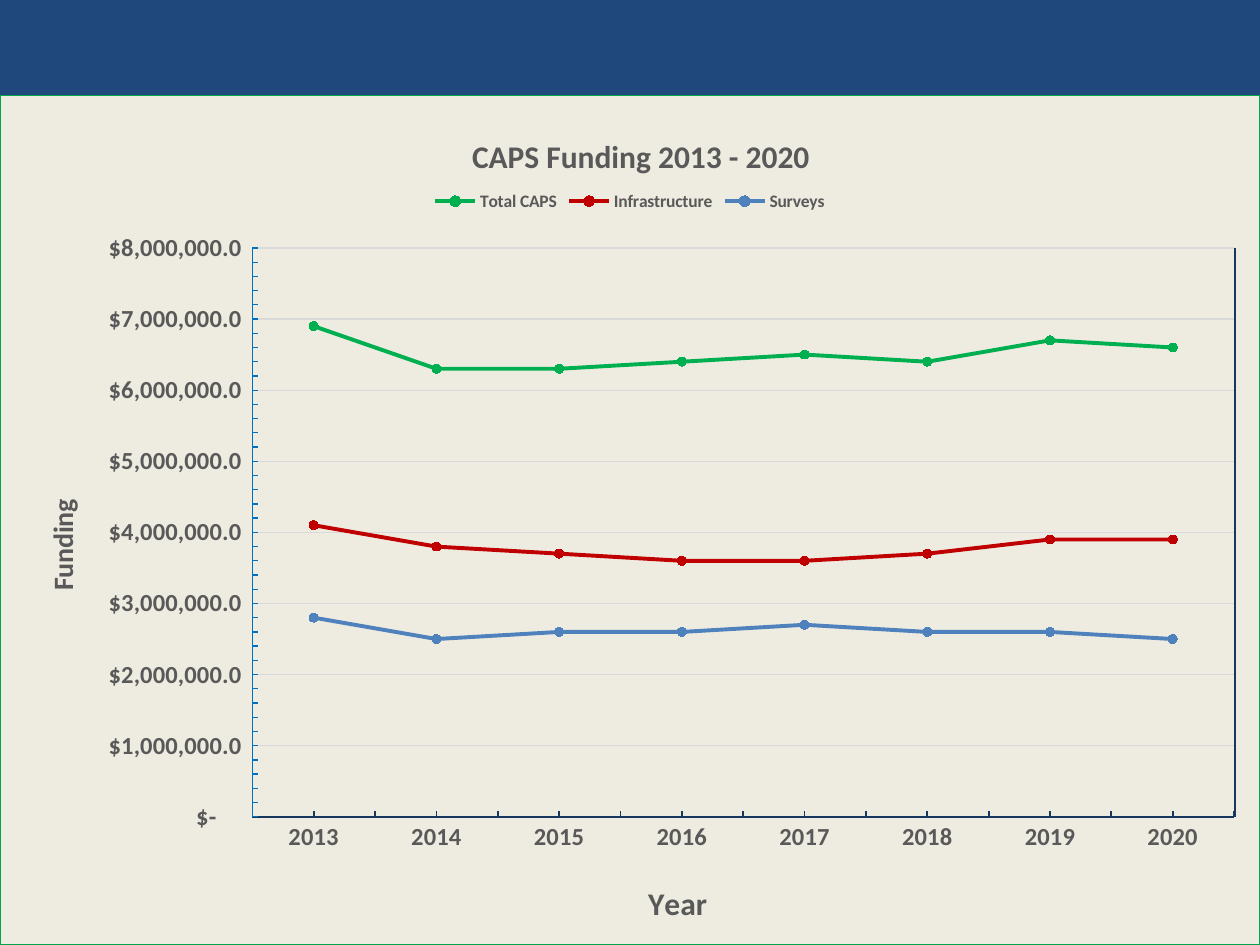
from lxml import etree
from pptx import Presentation
from pptx.chart.data import CategoryChartData
from pptx.dml.color import RGBColor
from pptx.enum.chart import (XL_CHART_TYPE, XL_LEGEND_POSITION,
                             XL_MARKER_STYLE, XL_TICK_MARK)
from pptx.enum.shapes import MSO_CONNECTOR, MSO_SHAPE
from pptx.oxml import parse_xml
from pptx.oxml.ns import qn
from pptx.util import Pt

LINE_CHART = XL_CHART_TYPE.LINE_MARKERS
TOP = XL_LEGEND_POSITION.TOP
CIRCLE = XL_MARKER_STYLE.CIRCLE
INSIDE, NO_TICK = XL_TICK_MARK.INSIDE, XL_TICK_MARK.NONE
RECT = MSO_SHAPE.RECTANGLE
STRAIGHT = MSO_CONNECTOR.STRAIGHT

FONT = "Calibri"
COLORS = {"paper": "EEECE1", "bar": "1F497D", "text": "595959",
          "grid": "D9D9D9", "navy": "17375E", "blue": "0070C0",
          "frame": "00A44A", "total": "00B050", "infra": "C00000",
          "survey": "4F81BD"}
MONEY = r'_("$"* #,##0.0_);_("$"* \(#,##0.0\);_("$"* "-"??_);_(@_)'
YEARS = [str(year) for year in range(2013, 2021)]
# name, line colour, marker colour, millions of dollars
SERIES = [
    ("Total CAPS", "total", "total", [6.9, 6.3, 6.3, 6.4, 6.5, 6.4, 6.7, 6.6]),
    ("Infrastructure", "infra", "infra",
     [4.1, 3.8, 3.7, 3.6, 3.6, 3.7, 3.9, 3.9]),
    ("Surveys", "survey", "blue", [2.8, 2.5, 2.6, 2.6, 2.7, 2.6, 2.6, 2.5]),
]
PLOT = (0.2, 0.18, 0.78, 0.67)  # shares of the chart box


def rgb(name):
    return RGBColor.from_string(COLORS[name])


def paint(fill, name):
    fill.solid()
    fill.fore_color.rgb = rgb(name)


def draw(line, name, width):
    line.color.rgb = rgb(name)
    line.width = Pt(width)


def style(font, size):
    font.name, font.size, font.bold = FONT, Pt(size), True
    font.color.rgb = rgb("text")


def place(host, index, x, y, w=None, h=None, inner=False):
    """Give a chart part a fixed place, in shares of the chart box."""
    old = host.find(qn("c:layout"))
    if old is not None:
        host.remove(old)
    layout = etree.Element(qn("c:layout"))
    manual = etree.SubElement(layout, qn("c:manualLayout"))
    items = [("layoutTarget", "inner" if inner else None),
             ("xMode", "edge"), ("yMode", "edge"),
             ("x", x), ("y", y), ("w", w), ("h", h)]
    for tag, value in items:
        if value is not None:
            etree.SubElement(manual, qn("c:" + tag)).set("val", str(value))
    host.insert(index, layout)


def area(line=None):
    """Make the fill and border of a chart area."""
    edge = "<a:ln><a:noFill/></a:ln>"
    if line:
        edge = (f'<a:ln w="{Pt(0.75)}"><a:solidFill><a:srgbClr '
                f'val="{COLORS[line]}"/></a:solidFill></a:ln>')
    return parse_xml(
        '<c:spPr xmlns:c="http://schemas.openxmlformats.org/drawingml/2006/chart" '
        'xmlns:a="http://schemas.openxmlformats.org/drawingml/2006/main">'
        f'<a:solidFill><a:srgbClr val="{COLORS["paper"]}"/></a:solidFill>'
        f"{edge}</c:spPr>")


def entitle(title, text, size, x, y):
    title.text_frame.text = text
    style(title.text_frame.paragraphs[0].font, size)
    place(title.element if hasattr(title, "element") else title._element,
          1, x, y)


def set_axis(axis, color, width):
    axis.major_tick_mark, axis.minor_tick_mark = NO_TICK, INSIDE
    style(axis.tick_labels.font, 14)
    draw(axis.format.line, color, width)


def add_bar(slide, x, y, w, h):
    bar = slide.shapes.add_shape(RECT, Pt(x), Pt(y), Pt(w), Pt(h))
    bar.shadow.inherit = False
    paint(bar.fill, "bar")
    bar.line.fill.background()


def add_funding(slide, x, y, w, h):
    data = CategoryChartData()
    data.categories = YEARS
    for name, _, _, values in SERIES:
        data.add_series(name, [round(v * 1_000_000) for v in values])
    chart = slide.shapes.add_chart(
        LINE_CHART, Pt(x), Pt(y), Pt(w), Pt(h), data).chart
    chart.font.name, chart.font.size = FONT, Pt(10)

    # Areas
    root = chart.element.find(qn("c:chart"))
    root.addnext(area("frame"))
    plot = root.find(qn("c:plotArea"))
    place(plot, 0, *PLOT, inner=True)
    plot.append(area())

    # Title and legend
    chart.has_title = True
    entitle(chart.chart_title, "CAPS Funding 2013 - 2020", 18, 0.37, 0.04)
    chart.has_legend = True
    legend = chart.legend
    legend.position, legend.include_in_layout = TOP, False
    style(legend.font, 10)
    place(root.find(qn("c:legend")), 1, 0.34, 0.11, 0.32, 0.03)

    # Axes
    years, funds = chart.category_axis, chart.value_axis
    set_axis(years, "navy", 1)
    entitle(years.axis_title, "Year", 18, 0.51, 0.92)
    set_axis(funds, "blue", 0.75)
    entitle(funds.axis_title, "Funding", 16, 0.03, 0.47)
    funds.minimum_scale, funds.maximum_scale = 0, 8_000_000
    funds.major_unit, funds.minor_unit = 1_000_000, 200_000
    funds.tick_labels.number_format = MONEY
    funds.tick_labels.number_format_is_linked = False
    draw(funds.major_gridlines.format.line, "grid", 0.75)

    # Lines
    chart.plots[0].vary_by_categories = False
    for series, (_, color, dot, _) in zip(chart.plots[0].series, SERIES):
        series.smooth = False
        draw(series.format.line, color, 2.25)
        marker = series.marker
        marker.style, marker.size = CIRCLE, 5
        paint(marker.format.fill, dot)
        draw(marker.format.line, color, 0.75)

    # Right edge of the plot
    left, top, wide, high = PLOT
    edge = x + w * (left + wide)
    rule = slide.shapes.add_connector(
        STRAIGHT, Pt(edge), Pt(y + h * top),
        Pt(edge), Pt(y + h * (top + high)))
    draw(rule.line, "navy", 1)
    etree.SubElement(rule._element.spPr, qn("a:effectLst"))


def main():
    deck = Presentation()
    deck.slide_width, deck.slide_height = Pt(720), Pt(540)
    slide = deck.slides.add_slide(deck.slide_layouts[6])
    paint(slide.background.fill, "paper")
    add_bar(slide, 0, 0, 720, 55.44)
    add_funding(slide, 0, 54, 720, 486)
    deck.save("out.pptx")


if __name__ == "__main__":
    main()
